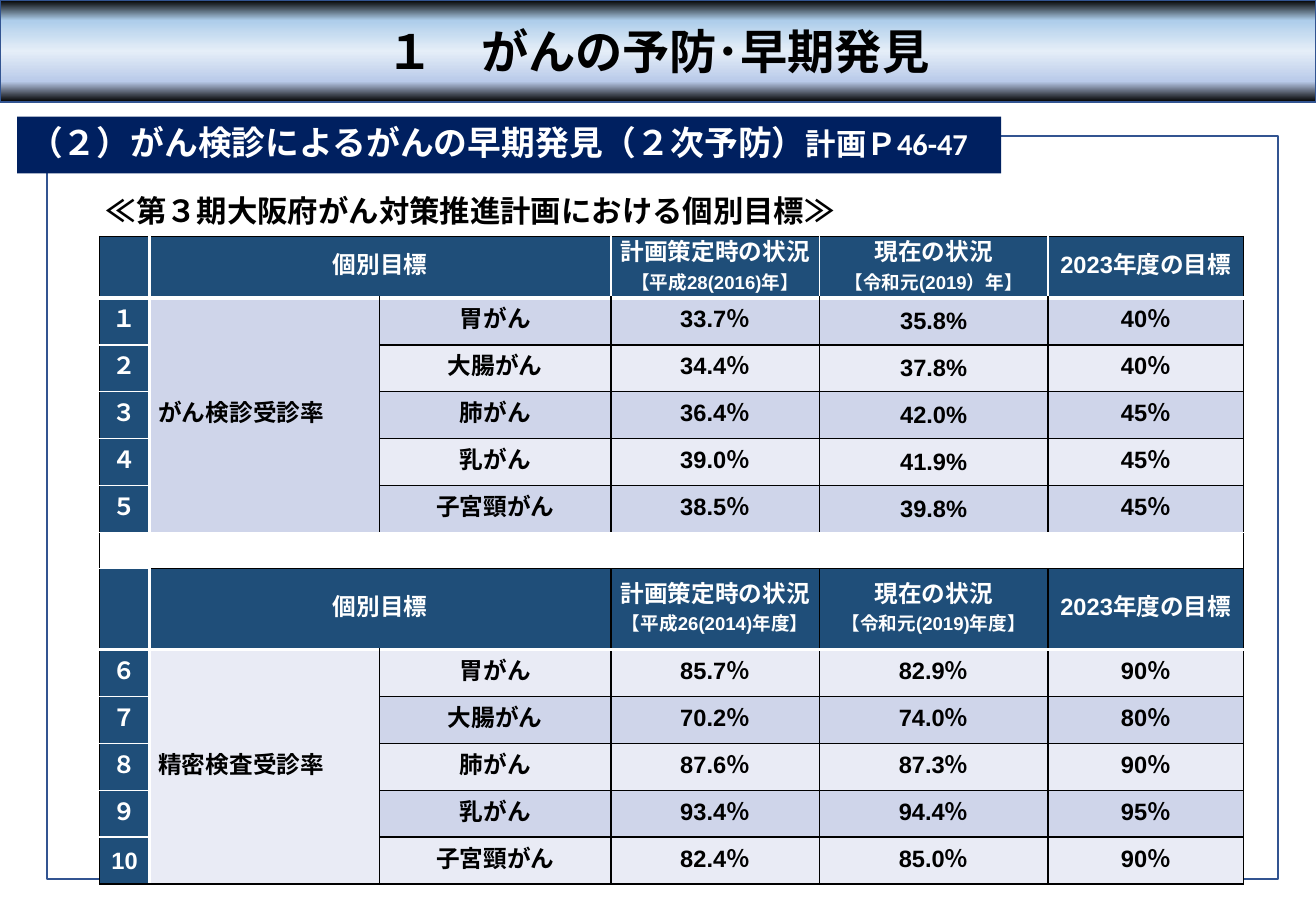
"""Builds a slide of cancer screening targets with one grouped table."""
import pptx
import pptx.dml.color
import pptx.enum.lang
import pptx.enum.shapes
import pptx.enum.text
import pptx.oxml
import pptx.oxml.ns
import pptx.util
from pptx.util import Cm

RGBColor = pptx.dml.color.RGBColor
BLACK = RGBColor(0x00, 0x00, 0x00)
WHITE = RGBColor(0xFF, 0xFF, 0xFF)
NAVY = RGBColor(0x00, 0x20, 0x60)
OUTLINE = RGBColor(0x32, 0x54, 0x91)
HEADER = RGBColor(0x1F, 0x4E, 0x79)
BAND_DARK = RGBColor(0xCF, 0xD5, 0xEA)
BAND_LIGHT = RGBColor(0xE9, 0xEB, 0xF5)
SKY = RGBColor(0xAD, 0xCD, 0xEA)
PALE = RGBColor(0xE5, 0xEE, 0xF8)
PERIWINKLE = RGBColor(0xB9, 0xCA, 0xE9)
TITLE_STOPS = ((0, BLACK), (20, SKY), (50, PALE), (80, PERIWINKLE), (100, BLACK))
JAPANESE_FONT = "Noto Sans CJK JP"
LEFT, CENTER = pptx.enum.text.PP_ALIGN.LEFT, pptx.enum.text.PP_ALIGN.CENTER
MIDDLE = pptx.enum.text.MSO_ANCHOR.MIDDLE

COLUMNS = (1.05, 4.81, 4.83, 4.36, 4.78, 4.09)
HEADER_ROW, GAP_ROW, SECOND_HEADER_ROW = 0, 6, 7
ROW_HEIGHTS = {HEADER_ROW: 1.28, GAP_ROW: 0.2, SECOND_HEADER_ROW: 1.47}
SITES = ("胃がん", "大腸がん", "肺がん", "乳がん", "子宮頸がん")
GROUPS = (
    (HEADER_ROW, "がん検診受診率", "【平成28(2016)年】", "【令和元(2019）年】",
     ("１", "２", "３", "４", "５"),
     (("33.7％", "35.8%", "40％"), ("34.4％", "37.8%", "40％"),
      ("36.4％", "42.0%", "45％"), ("39.0％", "41.9%", "45％"),
      ("38.5％", "39.8%", "45％"))),
    (SECOND_HEADER_ROW, "精密検査受診率", "【平成26(2014)年度】", "【令和元(2019)年度】",
     ("６", "７", "８", "９", "10"),
     (("85.7％", "82.9％", "90％"), ("70.2％", "74.0％", "80％"),
      ("87.6％", "87.3％", "90％"), ("93.4％", "94.4％", "95％"),
      ("82.4％", "85.0％", "90％"))),
)


class TargetPage:
    def __init__(self, deck):
        self.page = deck.slides.add_slide(deck.slide_layouts[5])
        self.shapes = self.page.shapes

    def format(self, target, values):
        for name, value in values.items():
            setattr(target, name, value)

    def fill_text(self, frame, lines, font, color, align=LEFT, spacing=None):
        self.format(frame, {"word_wrap": True, "vertical_anchor": MIDDLE})
        for index, spans in enumerate(lines):
            para = frame.add_paragraph() if index else frame.paragraphs[0]
            self.format(para, {"alignment": align, "line_spacing": spacing})
            for text, size in spans:
                span = para.add_run()
                span.text = text
                self.format(span.font, {
                    "name": font, "size": pptx.util.Pt(size), "bold": True,
                    "language_id": pptx.enum.lang.MSO_LANGUAGE_ID.JAPANESE})
                span.font.color.rgb = color
                latin = span.font._element.find(pptx.oxml.ns.qn("a:latin"))
                latin.addnext(pptx.oxml.parse_xml(
                    f'<a:ea {pptx.oxml.ns.nsdecls("a")} typeface="{JAPANESE_FONT}"/>'))

    def outline(self, shape):
        shape.line.color.rgb = OUTLINE
        shape.line.width = pptx.util.Pt(1)

    def title(self, text, position):
        bar = self.shapes.title
        self.format(bar, position)
        bar.fill.gradient()
        bar.fill.gradient_angle = 270
        stops = bar._element.spPr.find(".//" + pptx.oxml.ns.qn("a:gsLst"))
        for stop in list(stops):
            stops.remove(stop)
        for percent, color in TITLE_STOPS:
            stops.append(pptx.oxml.parse_xml(
                f'<a:gs {pptx.oxml.ns.nsdecls("a")} pos="{percent * 1000}">'
                f'<a:srgbClr val="{color}"/></a:gs>'))
        self.outline(bar)
        bar.text_frame.auto_size = pptx.enum.text.MSO_AUTO_SIZE.NONE
        self.fill_text(bar.text_frame, [[(text, 28)]], JAPANESE_FONT, BLACK, CENTER)

    def rectangle(self, position, fill):
        box = self.shapes.add_shape(
            pptx.enum.shapes.MSO_SHAPE.RECTANGLE, *position)
        box.shadow.inherit = False
        box.fill.solid()
        box.fill.fore_color.rgb = fill
        box.line.fill.background()
        return box

    def caption(self, text, position):
        box = self.shapes.add_textbox(*position)
        self.fill_text(box.text_frame, [[(text, 18)]], "Calibri", BLACK)

    def cell(self, cell, fill, borders):
        self.format(cell, {
            "margin_left": Cm(0.18), "margin_right": Cm(0.18),
            "margin_top": 0, "margin_bottom": 0, "vertical_anchor": MIDDLE})
        cell.text_frame.paragraphs[0].line_spacing = pptx.util.Pt(16)
        properties = cell._tc.get_or_add_tcPr()
        for side, (color, width) in borders.items():
            properties.append(pptx.oxml.parse_xml(
                f'<a:ln{side} {pptx.oxml.ns.nsdecls("a")} w="{pptx.util.Pt(width)}">'
                f'<a:solidFill><a:srgbClr val="{color}"/></a:solidFill></a:ln{side}>'))
        cell.fill.solid()
        cell.fill.fore_color.rgb = fill

    def cell_text(self, cell, lines, color, align=CENTER):
        self.fill_text(cell.text_frame, [[line] for line in lines], "Arial", color,
                       align, pptx.util.Pt(16))

    def table(self, position):
        heights = [ROW_HEIGHTS.get(row, 0.98) for row in range(13)]
        grid = self.shapes.add_table(
            len(heights), len(COLUMNS), *position,
            Cm(sum(COLUMNS)), Cm(sum(heights))).table
        self.format(grid, {"first_row": False, "horz_banding": False})
        for column, width in zip(grid.columns, COLUMNS):
            column.width = Cm(width)
        for row, height in enumerate(heights):
            grid.rows[row].height = Cm(height)
            for column in range(len(COLUMNS)):
                self.cell(grid.cell(row, column), cell_fill(row, column),
                          cell_borders(row, column))
        grid.cell(GAP_ROW, 0).merge(grid.cell(GAP_ROW, 5))
        for top, group, planned, current, numbers, rates in GROUPS:
            grid.cell(top, 1).merge(grid.cell(top, 2))
            grid.cell(top + 1, 1).merge(grid.cell(top + 5, 1))
            headings = {1: [("個別目標", 14)],
                        3: [("計画策定時の状況", 14), (planned, 11)],
                        4: [("現在の状況", 14), (current, 11)],
                        5: [("2023年度の目標", 14)]}
            for column, lines in headings.items():
                self.cell_text(grid.cell(top, column), lines, WHITE)
            self.cell_text(grid.cell(top + 1, 1), [(group, 14)], BLACK, LEFT)
            for row, (number, site, values) in enumerate(
                    zip(numbers, SITES, rates), top + 1):
                self.cell_text(grid.cell(row, 0), [(number, 14)], WHITE)
                for column, text in enumerate((site, *values), 2):
                    self.cell_text(grid.cell(row, column), [(text, 14)], BLACK)


def cell_fill(row, column):
    if row == GAP_ROW:
        return WHITE
    if column == 0 or row in (HEADER_ROW, SECOND_HEADER_ROW):
        return HEADER
    if column == 1:
        return BAND_DARK if row < GAP_ROW else BAND_LIGHT
    return BAND_DARK if row % 2 else BAND_LIGHT


def cell_borders(row, column):
    thin, light, thick = (BLACK, 1), (WHITE, 1), (WHITE, 2.25)
    borders = dict.fromkeys("LRTB", thin)
    if row == GAP_ROW:
        return borders | {"T": light, "B": light}
    if column == 0:
        borders |= {"R": thick, "T": light, "B": light}
    if column == 1:
        borders["L"] = thick
    if row == HEADER_ROW:
        borders["T"] = thin
        if 1 <= column < 5:
            borders["R"] = light
        if column > 1:
            borders["L"] = light
    if row in (HEADER_ROW, SECOND_HEADER_ROW):
        borders["B"] = thick
    if row - 1 in (HEADER_ROW, SECOND_HEADER_ROW):
        borders["T"] = thick
    if row == 12:
        borders["B"] = thin
    return borders


def main():
    deck = pptx.Presentation()
    deck.slide_width, deck.slide_height = Cm(27.51), Cm(19.05)
    page = TargetPage(deck)
    page.title("１　がんの予防･早期発見", {
        "left": 0, "top": 0, "width": deck.slide_width, "height": Cm(2.13)})
    frame = page.rectangle((Cm(0.99), Cm(2.84), Cm(25.73), Cm(15.54)), WHITE)
    page.outline(frame)
    page.caption("≪第３期大阪府がん対策推進計画における個別目標≫",
                 (Cm(1.96), Cm(3.89), Cm(16.97), Cm(1.02)))
    page.table((Cm(2.08), Cm(4.95)))
    tag = page.rectangle((Cm(0.36), Cm(2.44), Cm(20.57), Cm(1.19)), NAVY)
    page.fill_text(
        tag.text_frame,
        [[("（２）がん検診によるがんの早期発見（２次予防）", 20), ("計画Ｐ46-47", 18)]],
        "Calibri", WHITE, spacing=pptx.util.Pt(20))
    deck.save("out.pptx")


if __name__ == "__main__":
    main()
